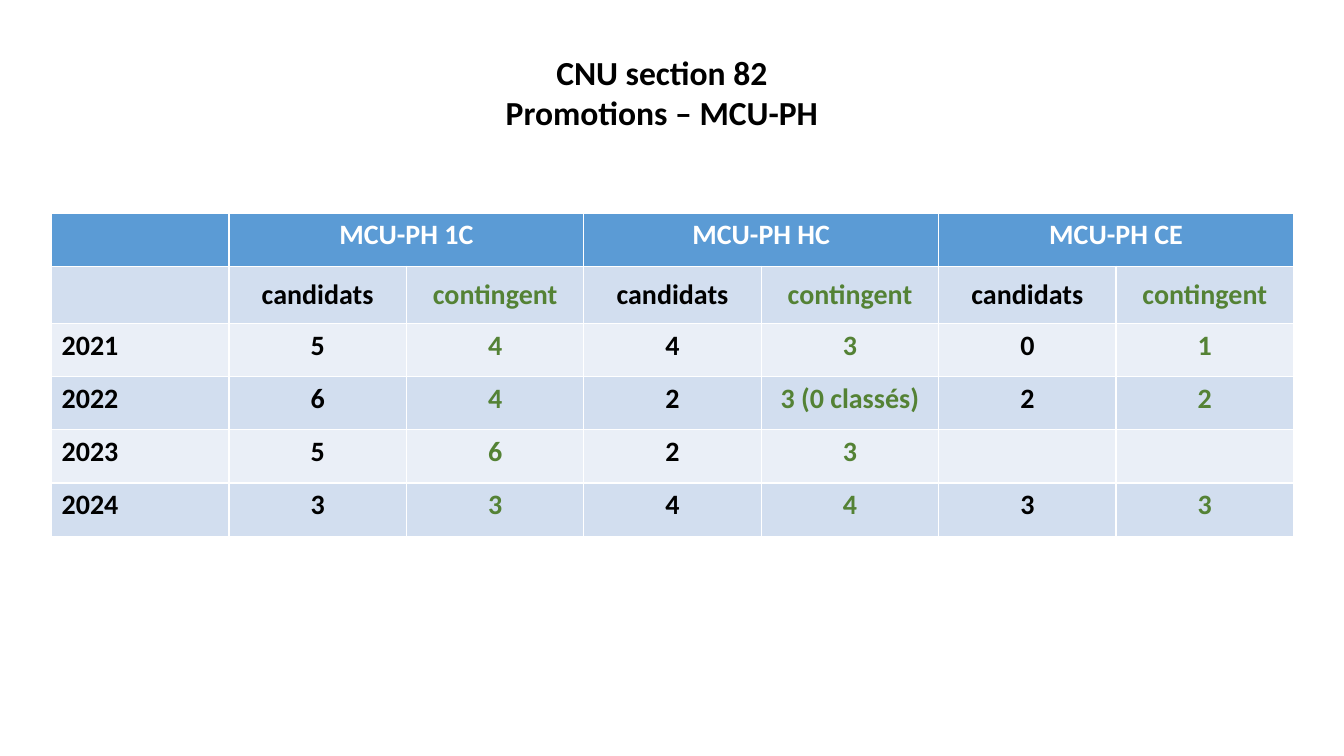
from pptx import Presentation
from pptx.dml.color import RGBColor as Rgb
from pptx.enum.text import MSO_ANCHOR as Anchor, PP_ALIGN as Align
from pptx.util import Cm, Pt

HUES = {
    "head": "5B9BD5",
    "dark": "D2DEEF",
    "light": "EAEFF7",
    "black": "000000",
    "green": "548235",
    "white": "FFFFFF",
}
GRADES = ["MCU-PH 1C", "MCU-PH HC", "MCU-PH CE"]
ROWS = [
    [""] + ["candidats", "contingent"] * len(GRADES),
    ["2021", "5", "4", "4", "3", "0", "1"],
    ["2022", "6", "4", "2", "3 (0 classés)", "2", "2"],
    ["2023", "5", "6", "2", "3", "", ""],
    ["2024", "3", "3", "4", "4", "3", "3"],
]


def write(frame, text, size=20, hue="black", align=Align.CENTER):
    """Fill a text frame, one paragraph per line."""
    frame.text = text
    for para in frame.paragraphs:
        para.alignment = align
        para.font.size = Pt(size)
        for run in para.runs:
            font = run.font
            font.name, font.size, font.bold = "Calibri", Pt(size), True
            font.color.rgb = Rgb.from_string(HUES[hue])


def paint(cell, hue):
    cell.fill.solid()
    cell.fill.fore_color.rgb = Rgb.from_string(HUES[hue])


def add_title(slide, left, top, width, height):
    title = slide.shapes.title
    title.left, title.top, title.width, title.height = left, top, width, height
    frame = title.text_frame
    frame.word_wrap = False
    frame.vertical_anchor = Anchor.TOP
    write(frame, "CNU section 82\nPromotions – MCU-PH", size=24)


def add_grid(slide, left, top, width, height):
    count = len(ROWS[0])
    grid = slide.shapes.add_table(
        len(ROWS) + 1, count, left, top, width, height).table
    for col in grid.columns:
        col.width = width // count
    for row in grid.rows:
        row.height = Cm(1.34)
    grid.rows[1].height = Cm(1.44)

    # Header: each grade spans two columns
    for c in range(count):
        paint(grid.cell(0, c), "head")
    for i, grade in enumerate(GRADES):
        cell = grid.cell(0, 2 * i + 1)
        cell.merge(grid.cell(0, 2 * i + 2))
        write(cell.text_frame, grade, hue="white")

    # Body: banded rows, quota columns in green
    for r, row in enumerate(ROWS, 1):
        for c, text in enumerate(row):
            cell = grid.cell(r, c)
            paint(cell, "dark" if r % 2 else "light")
            if r == 1:
                cell.vertical_anchor = Anchor.MIDDLE
            write(cell.text_frame, text,
                  hue="green" if c and c % 2 == 0 else "black",
                  align=Align.CENTER if c else Align.LEFT)


def main():
    deck = Presentation()
    deck.slide_width, deck.slide_height = Cm(33.87), Cm(19.05)
    slide = deck.slides.add_slide(deck.slide_layouts[5])
    add_title(slide, Cm(12.45), Cm(1.17), Cm(8.46), Cm(2.31))
    add_grid(slide, Cm(1.3), Cm(5.37), Cm(31.3), Cm(8.14))
    deck.save("out.pptx")


if __name__ == "__main__":
    main()
